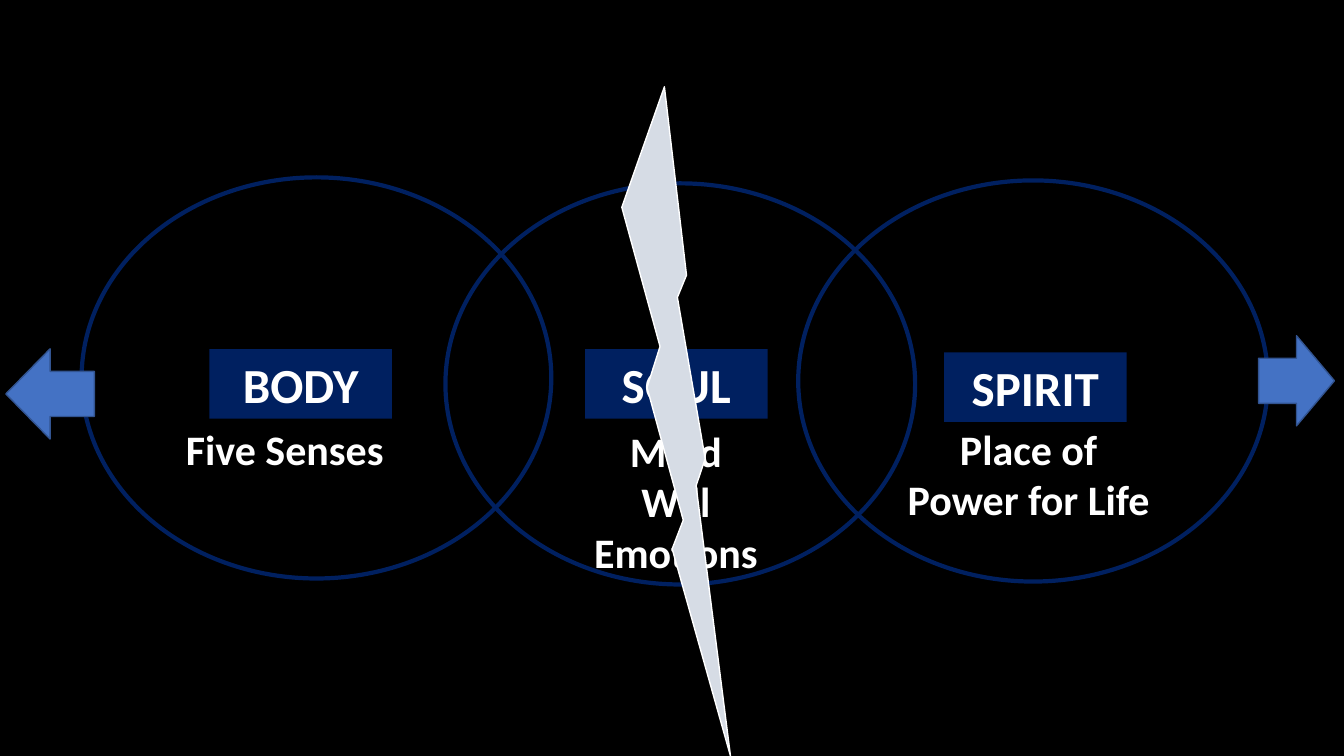
from dataclasses import dataclass

from pptx import Presentation
from pptx.dml.color import RGBColor
from pptx.enum.shapes import MSO_SHAPE
from pptx.enum.text import MSO_ANCHOR, MSO_AUTO_SIZE, PP_ALIGN
from pptx.shapes.autoshape import Shape
from pptx.slide import Slide
from pptx.util import Pt

ELLIPSE = MSO_SHAPE.OVAL
RECTANGLE = MSO_SHAPE.RECTANGLE
LEFT_ARROW = MSO_SHAPE.LEFT_ARROW
RIGHT_ARROW = MSO_SHAPE.RIGHT_ARROW
LIGHTNING = MSO_SHAPE.LIGHTNING_BOLT
CENTER = PP_ALIGN.CENTER
TOP = MSO_ANCHOR.TOP
FIT_SHAPE = MSO_AUTO_SIZE.SHAPE_TO_FIT_TEXT


@dataclass(frozen=True)
class Theme:
    background: RGBColor = RGBColor(0x00, 0x00, 0x00)
    navy: RGBColor = RGBColor(0x00, 0x20, 0x60)
    white: RGBColor = RGBColor(0xFF, 0xFF, 0xFF)
    arrow: RGBColor = RGBColor(0x44, 0x72, 0xC4)
    arrow_edge: RGBColor = RGBColor(0x32, 0x54, 0x91)
    bolt: RGBColor = RGBColor(0xD6, 0xDC, 0xE5)
    font: str = "Calibri"
    label_size: float = 35
    note_size: float = 30


@dataclass(frozen=True)
class Box:
    """A frame in points."""
    left: float
    top: float
    width: float
    height: float


@dataclass(frozen=True)
class Part:
    """One part of a person: its circle, its label and the notes below."""
    label: str
    notes: tuple[str, ...]
    circle: Box
    label_box: Box
    note_box: Box


THEME = Theme()
CIRCLE_SIZE = (335.5, 286.5)
LABEL_SIZE = (130.4, 49.7)

PARTS = (
    Part("BODY", ("Five Senses",),
         Box(58.3, 126.7, *CIRCLE_SIZE),
         Box(149.6, 249.4, *LABEL_SIZE),
         Box(106.6, 298.8, 193.7, 43.9)),
    Part("SPIRIT", ("Place of", "Power for Life"),
         Box(570.2, 128.9, *CIRCLE_SIZE),
         Box(674.4, 251.7, *LABEL_SIZE),
         Box(637.9, 298.8, 193.7, 79.9)),
    Part("SOUL", ("Mind", "Will", "Emotions"),
         Box(318.2, 131, *CIRCLE_SIZE),
         Box(417.9, 249.4, *LABEL_SIZE),
         Box(380.2, 300.2, 205.2, 116.6)),
)


def add_figure(slide: Slide, kind: MSO_SHAPE, box: Box, fill: RGBColor | None,
               line: RGBColor | None = None, line_width: float = 1) -> Shape:
    figure = slide.shapes.add_shape(
        kind, Pt(box.left), Pt(box.top), Pt(box.width), Pt(box.height))
    figure.shadow.inherit = False
    if fill is None:
        figure.fill.background()
    else:
        figure.fill.solid()
        figure.fill.fore_color.rgb = fill
    if line is None:
        figure.line.fill.background()
    else:
        figure.line.color.rgb = line
        figure.line.width = Pt(line_width)
    return figure


def write_lines(holder: Shape, lines: tuple[str, ...], size: float) -> None:
    frame = holder.text_frame
    frame.word_wrap = True
    frame.auto_size = FIT_SHAPE
    frame.vertical_anchor = TOP
    frame.text = "\n".join(lines)
    for paragraph in frame.paragraphs:
        paragraph.alignment = CENTER
        paragraph.font.name = THEME.font
        paragraph.font.size = Pt(size)
        paragraph.font.bold = True
        paragraph.font.color.rgb = THEME.white


def add_label(slide: Slide, part: Part) -> None:
    label = add_figure(slide, RECTANGLE, part.label_box, THEME.navy)
    write_lines(label, (part.label,), THEME.label_size)


def add_notes(slide: Slide, part: Part) -> None:
    box = part.note_box
    notes = slide.shapes.add_textbox(
        Pt(box.left), Pt(box.top), Pt(box.width), Pt(box.height))
    write_lines(notes, part.notes, THEME.note_size)


def main() -> None:
    presentation = Presentation()
    presentation.slide_width, presentation.slide_height = Pt(960), Pt(540)
    slide = presentation.slides.add_slide(presentation.slide_layouts[6])
    slide.background.fill.solid()
    slide.background.fill.fore_color.rgb = THEME.background

    # Overlapping circles
    for part in PARTS:
        add_figure(slide, ELLIPSE, part.circle, None, THEME.navy, 3)

    # Labels and the notes under them
    for part in PARTS:
        add_label(slide, part)
        add_notes(slide, part)

    # Arrows pulling outwards
    for kind, box in ((LEFT_ARROW, Box(4.2, 249.2, 63.2, 64.4)),
                      (RIGHT_ARROW, Box(899, 239.8, 54.2, 64.4))):
        add_figure(slide, kind, box, THEME.arrow, THEME.arrow_edge)

    # Bolt splitting the soul
    add_figure(slide, LIGHTNING, Box(444.2, 62, 77.6, 478),
               THEME.bolt, THEME.white)

    presentation.save("out.pptx")


if __name__ == "__main__":
    main()
